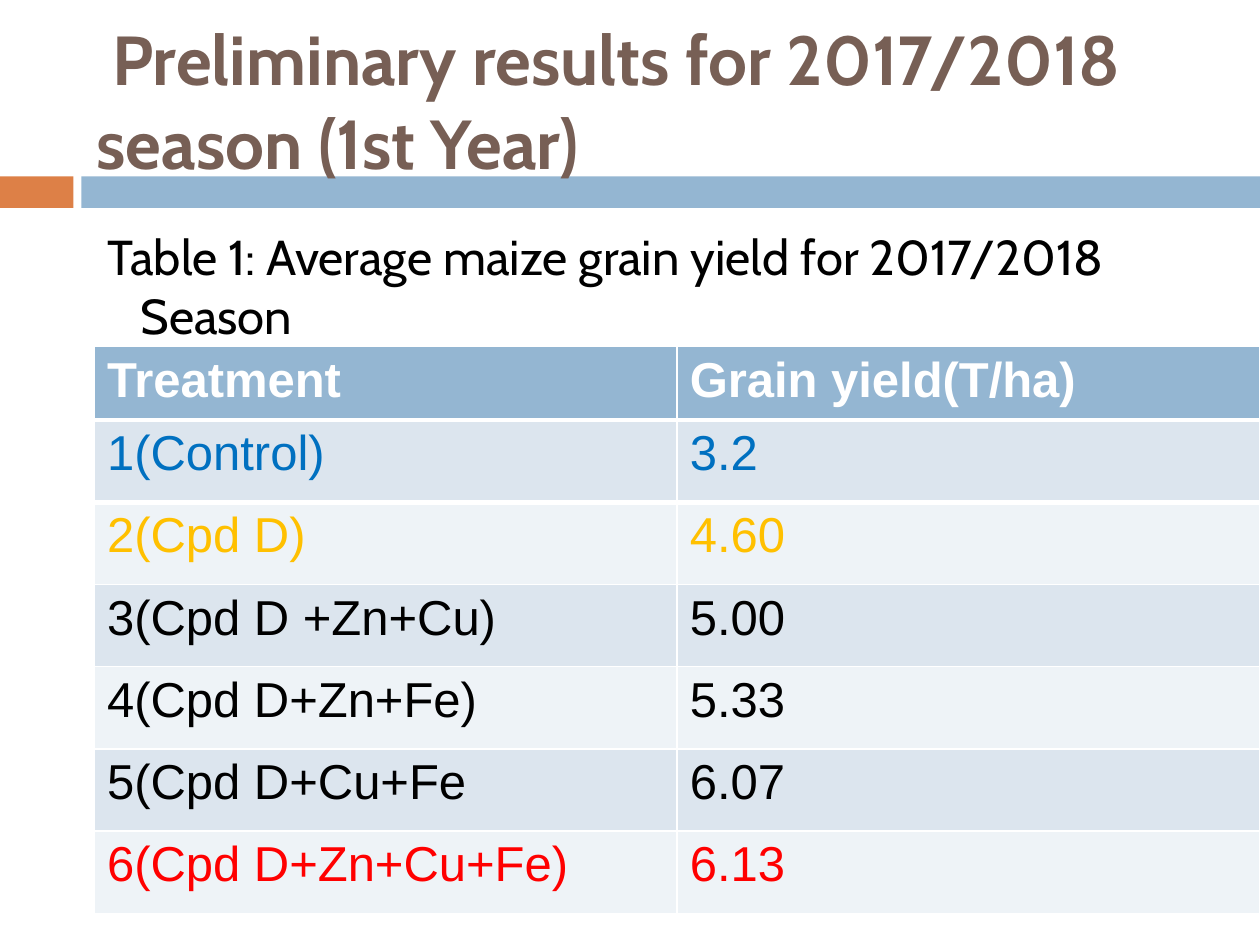
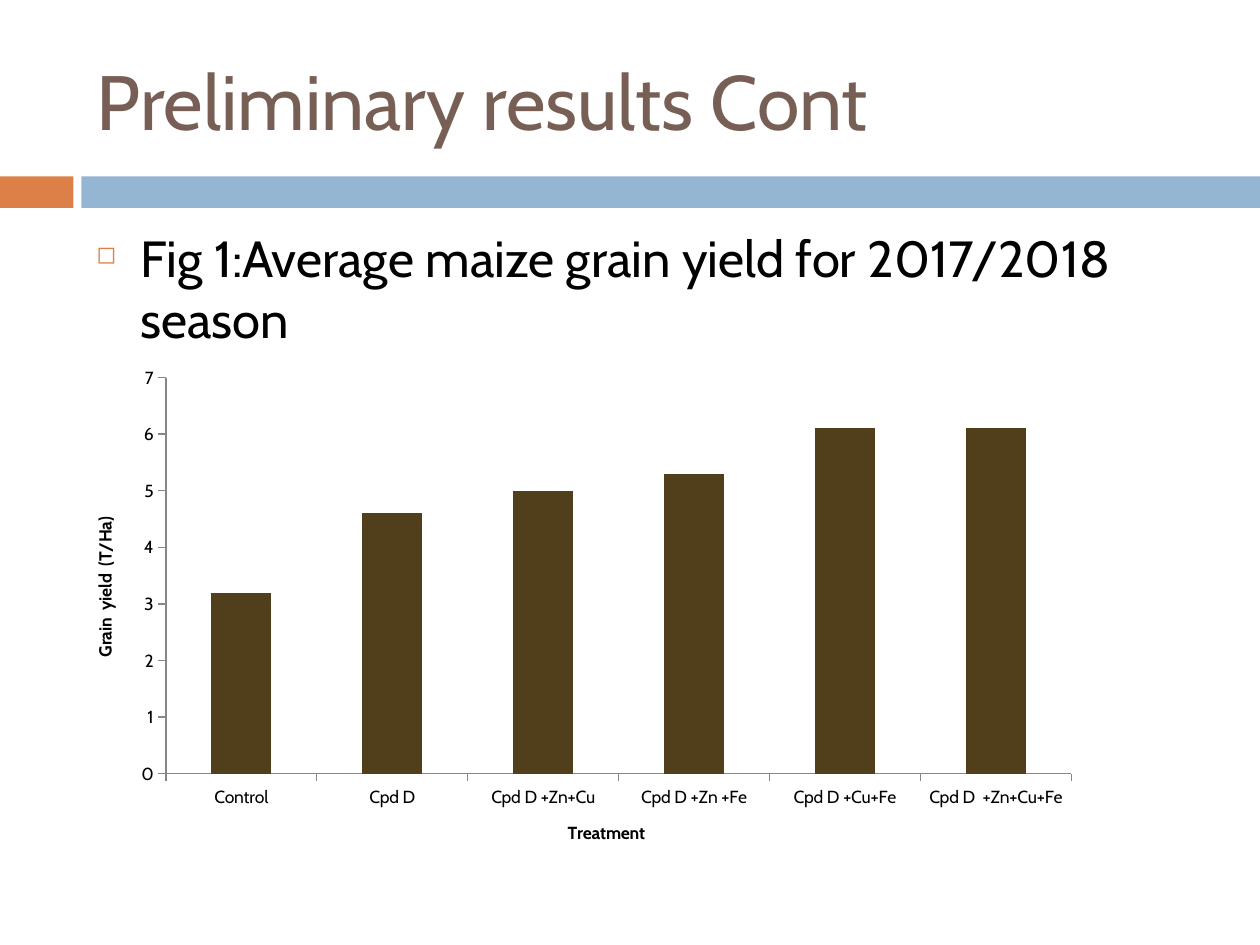
from lxml import etree
from pptx import Presentation
from pptx.chart.data import CategoryChartData
from pptx.dml.color import RGBColor
from pptx.enum.chart import XL_CHART_TYPE, XL_TICK_MARK
from pptx.enum.shapes import MSO_SHAPE
from pptx.enum.text import MSO_ANCHOR, MSO_AUTO_SIZE, PP_ALIGN
from pptx.oxml import parse_xml
from pptx.oxml.ns import nsdecls, qn
from pptx.util import Pt

COLUMN = XL_CHART_TYPE.COLUMN_CLUSTERED
OUTSIDE = XL_TICK_MARK.OUTSIDE
RECT = MSO_SHAPE.RECTANGLE
MIDDLE = MSO_ANCHOR.MIDDLE
NO_FIT = MSO_AUTO_SIZE.NONE
LEFT = PP_ALIGN.LEFT

HEX = {
    "orange": "DD8047", "blue": "94B6D2", "brown": "775F55",
    "black": "000000", "white": "FFFFFF", "gray": "868686",
    "odd": "DCE5EE", "even": "EEF3F7", "bar": "513E1B",
    "low": "0070C0", "amber": "FFC000", "red": "FF0000",
}
RGB = {name: RGBColor.from_string(code) for name, code in HEX.items()}

# Table label, chart label, yield, row colour
YIELDS = [
    ("1(Control)", "Control", "3.2", "low"),
    ("2(Cpd D)", "Cpd D", "4.60", "amber"),
    ("3(Cpd D +Zn+Cu)", "Cpd D +Zn+Cu", "5.00", "black"),
    ("4(Cpd D+Zn+Fe)", "Cpd D +Zn +Fe", "5.33", "black"),
    ("5(Cpd D+Cu+Fe", "Cpd D +Cu+Fe", "6.07", "black"),
    ("6(Cpd D+Zn+Cu+Fe)", "Cpd D  +Zn+Cu+Fe", "6.13", "red"),
]

# Title, title size, bold, caption, caption size
PAGES = [
    (" Preliminary results for 2017/2018 season (1st Year)", 39.6, True,
     " Table 1: Average maize grain yield for 2017/2018 Season", 28),
    ("Preliminary results Cont", 44, False,
     "Fig 1:Average maize grain yield for 2017/2018 season", 29),
]


def style(font, color, size, name="Cabin", bold=False):
    looks = {"name": name, "size": Pt(size), "bold": bold}
    for key, value in looks.items():
        setattr(font, key, value)
    font.color.rgb = RGB[color]


deck = Presentation()
deck.slide_width, deck.slide_height = Pt(720), Pt(540)
layout = deck.slide_layouts[5]
slides = [deck.slides.add_slide(layout) for page in PAGES]

# Bands, shared through the layout
for left, width, color in [(0, 42, "orange"), (46.5, 673.5, "blue")]:
    band = slides[0].shapes.add_shape(RECT, Pt(left), Pt(100.8), Pt(width), Pt(18))
    band.shadow.inherit = False
    band.fill.solid()
    band.fill.fore_color.rgb = RGB[color]
    band.line.fill.background()
    layout.shapes.element.append(band.element)

# Titles and captions
caps = []
for slide, (head, size, bold, text, small) in zip(slides, PAGES):
    title = slide.shapes.title
    title.left, title.top, title.width, title.height = Pt(48), Pt(18), Pt(642), Pt(78)
    frame = title.text_frame
    frame.text = head
    frame.vertical_anchor = MIDDLE
    frame.auto_size = NO_FIT
    frame.paragraphs[0].alignment = LEFT
    style(frame.paragraphs[0].runs[0].font, "brown", size, bold=bold)

    frame = slide.shapes.add_textbox(Pt(48), Pt(126), Pt(642), Pt(354)).text_frame
    frame.word_wrap = True
    frame.text = text
    para = frame.paragraphs[0]
    para.space_before = Pt(7)
    style(para.runs[0].font, "black", small)
    props = para._p.get_or_add_pPr()
    props.set("marL", str(Pt(25.2)))
    props.set("indent", str(-Pt(25.2)))
    caps.append(props)

# Square bullet on the figure caption
tint = etree.SubElement(caps[1], qn("a:buClr"))
etree.SubElement(tint, qn("a:srgbClr"), val=HEX["orange"])
etree.SubElement(caps[1], qn("a:buSzPct"), val="48000")
etree.SubElement(caps[1], qn("a:buChar"), char="◻")

# Yield table
rows = [("Treatment", "Grain yield(T/ha)", "white")]
rows += [(label, value, color) for label, _, value, color in YIELDS]
table = slides[0].shapes.add_table(
    len(rows), 2, Pt(54), Pt(198), Pt(666), Pt(324)).table
for col in table.columns:
    col.width = Pt(333)
for i, (label, value, color) in enumerate(rows):
    table.rows[i].height = Pt(47 if i else 42)
    fill = ("odd" if i % 2 else "even") if i else "blue"
    for cell, text in zip(table.rows[i].cells, (label, value)):
        cell.text = text
        cell.fill.solid()
        cell.fill.fore_color.rgb = RGB[fill]
        font = cell.text_frame.paragraphs[0].runs[0].font
        style(font, color, 28, "Arial", i == 0)

# Thick rule between the header and the first row
for i, side in enumerate(("lnB", "lnT")):
    for cell in table.rows[i].cells:
        rule = parse_xml(
            f'<a:{side} {nsdecls("a")} w="{Pt(3)}"><a:solidFill>'
            f'<a:srgbClr val="{HEX["white"]}"/></a:solidFill></a:{side}>')
        cell._tc.get_or_add_tcPr().insert(0, rule)

# Yield chart
data = CategoryChartData()
data.categories = [name for _, name, _, _ in YIELDS]
data.add_series("Series 1", [round(float(value), 1) for _, _, value, _ in YIELDS])
chart = slides[1].shapes.add_chart(
    COLUMN, Pt(36), Pt(204), Pt(588), Pt(294), data).chart
chart.has_legend = False
chart.has_title = False
style(chart.font, "black", 10)
plot = chart.plots[0]
plot.gap_width = 150
plot.vary_by_categories = False
bars = plot.series[0].format.fill
bars.solid()
bars.fore_color.rgb = RGB["bar"]

# Axes
for axis, text in [(chart.category_axis, "Treatment"),
                   (chart.value_axis, "Grain  yield  (T/Ha)")]:
    axis.has_major_gridlines = False
    axis.major_tick_mark = OUTSIDE
    axis.format.line.color.rgb = RGB["gray"]
    frame = axis.axis_title.text_frame
    frame.text = text
    style(frame.paragraphs[0].runs[0].font, "black", 10, bold=True)
scale = chart.value_axis
for key, value in {"minimum_scale": 0, "maximum_scale": 7, "major_unit": 1}.items():
    setattr(scale, key, value)

# Fixed plot area inside the chart
area = chart.element.xpath("//c:plotArea")[0]
for old in area.findall(qn("c:layout")):
    area.remove(old)
place = parse_xml(f"<c:layout {nsdecls('c')}><c:manualLayout/></c:layout>")
for tag, value in [("layoutTarget", "inner"), ("xMode", "edge"), ("yMode", "edge"),
                   ("x", "0.1"), ("y", "0.04"), ("w", "0.88"), ("h", "0.77")]:
    etree.SubElement(place[0], qn("c:" + tag), val=value)
area.insert(0, place)

deck.save("out.pptx")
